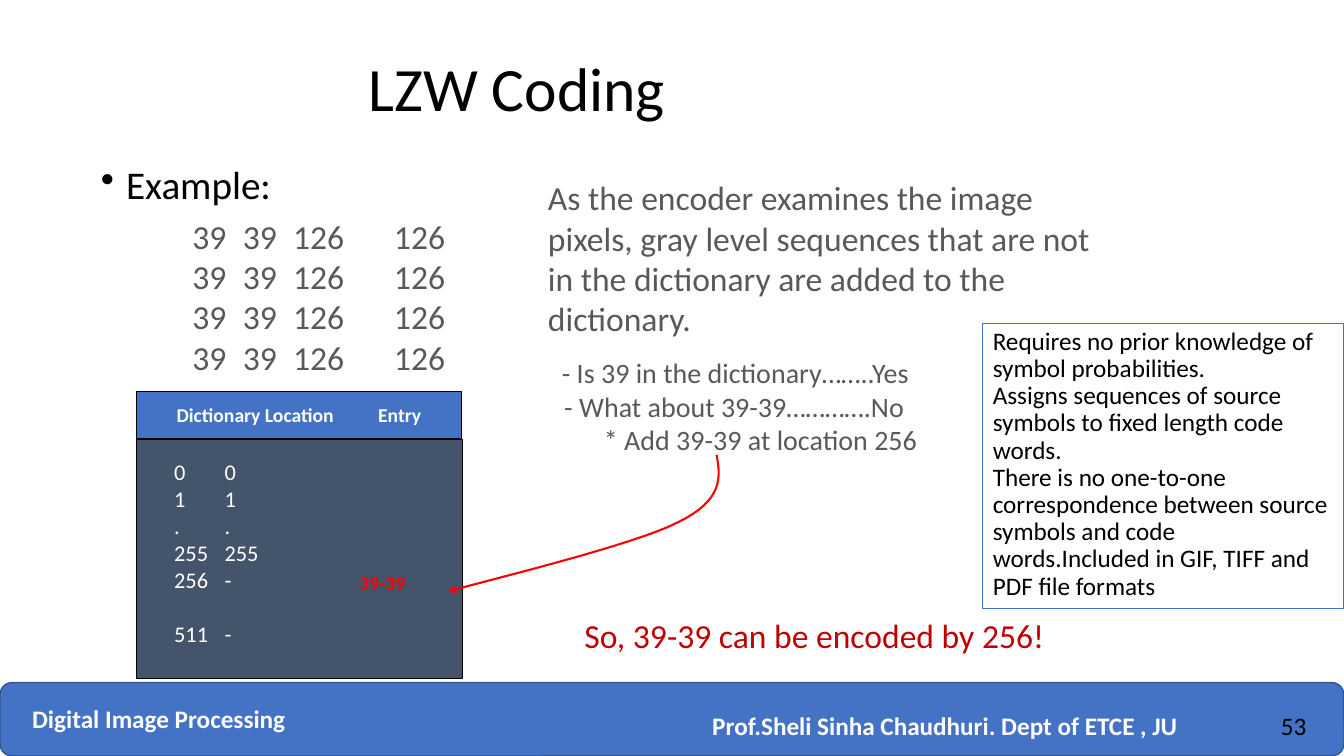
from dataclasses import dataclass

import pptx
import pptx.dml.color
import pptx.enum.shapes
import pptx.enum.text
import pptx.oxml
import pptx.oxml.ns
import pptx.util

Cm, Pt = pptx.util.Cm, pptx.util.Pt
RECT = pptx.enum.shapes.MSO_SHAPE.RECTANGLE
ROUNDED = pptx.enum.shapes.MSO_SHAPE.ROUNDED_RECTANGLE
NS = pptx.oxml.ns.nsdecls("a")

BLACK, WHITE, GRAY = "000000", "FFFFFF", "595959"
BLUE, SLATE, RED, DARK_RED = "4472C4", "44546A", "FF0000", "C00000"


@dataclass
class Line:
    text: str
    margin: float = 0
    tabs: tuple[float, ...] = ()
    bullet: bool = False
    before: float = 0


@dataclass
class Block:
    box: tuple[float, float, float, float]
    lines: list[Line]
    size: float
    color: str
    bold: bool = False
    wrap: bool = True
    middle: bool = False
    spacing: float = 1.0


@dataclass
class Panel:
    box: tuple[float, float, float, float]
    fill: str | None
    outline: str
    width: float = 0.75
    kind: pptx.enum.shapes.MSO_SHAPE = RECT


def rgb(value: str) -> pptx.dml.color.RGBColor:
    return pptx.dml.color.RGBColor.from_string(value)


def add_panel(slide, panel: Panel) -> None:
    sp = slide.shapes.add_shape(panel.kind, *map(Cm, panel.box))
    sp.shadow.inherit = False
    if panel.fill:
        sp.fill.solid()
        sp.fill.fore_color.rgb = rgb(panel.fill)
    else:
        sp.fill.background()
    sp.line.color.rgb = rgb(panel.outline)
    sp.line.width = Pt(panel.width)


def add_line(p, line: Line, block: Block) -> None:
    pPr = p._p.get_or_add_pPr()
    hanging = 0.64 if line.bullet else 0
    pPr.set("marL", str(Cm(line.margin + hanging)))
    pPr.set("indent", str(-Cm(hanging)))
    p.line_spacing = block.spacing
    p.space_before = Pt(line.before)
    if line.bullet:
        pPr.append(pptx.oxml.parse_xml(f'<a:buChar {NS} char="•"/>'))
    if line.tabs:
        stops = "".join(f'<a:tab pos="{Cm(t)}" algn="l"/>' for t in line.tabs)
        pPr.append(pptx.oxml.parse_xml(f"<a:tabLst {NS}>{stops}</a:tabLst>"))
    r = p.add_run()
    r.text = line.text
    font_format = {"name": "Calibri", "size": Pt(block.size), "bold": block.bold}
    for name, value in font_format.items():
        setattr(r.font, name, value)
    r.font.color.rgb = rgb(block.color)


def add_block(slide, block: Block) -> None:
    tf = slide.shapes.add_textbox(*map(Cm, block.box)).text_frame
    tf.word_wrap = block.wrap
    if block.middle:
        tf.vertical_anchor = pptx.enum.text.MSO_ANCHOR.MIDDLE
    for i, line in enumerate(block.lines):
        add_line(tf.add_paragraph() if i else tf.paragraphs[0], line, block)


def bezier(points: list[tuple[float, float]], steps: int = 16) -> list[tuple[float, float]]:
    """Points along a chain of cubic curves sharing their end points."""
    curve = [points[0]]
    for k in range(0, len(points) - 1, 3):
        for i in range(1, steps + 1):
            t = i / steps
            weights = ((1 - t) ** 3, 3 * t * (1 - t) ** 2, 3 * t * t * (1 - t), t ** 3)
            x, y = (sum(w * pt[axis] for w, pt in zip(weights, points[k:k + 4]))
                    for axis in (0, 1))
            curve.append((x, y))
    return curve


def add_curved_arrow(slide, points: list[tuple[float, float]], color: str) -> None:
    start, *rest = [(Cm(x), Cm(y)) for x, y in bezier(points)]
    builder = slide.shapes.build_freeform(*start)
    builder.add_line_segments(rest, close=False)
    sp = builder.convert_to_shape()
    sp.shadow.inherit = False
    sp.fill.background()
    sp.line.color.rgb = rgb(color)
    sp.line.width = Pt(1.5)
    sp.line._get_or_add_ln().append(pptx.oxml.parse_xml(f'<a:tailEnd {NS} type="triangle"/>'))


PANELS = [
    Panel((0, 17.2, 33.87, 1.85), BLUE, "325491", 1, ROUNDED),
    Panel((3.45, 9.86, 8.18, 1.19), BLUE, BLACK),
    Panel((3.45, 11.07, 8.2, 6.02), SLATE, BLACK),
    Panel((24.77, 8.15, 9.09, 7.19), None, BLUE),
]

ENTRIES = [("0", "0"), ("1", "1"), (".", "."), ("255", "255"), ("256", "-"), ("511", "-")]
dictionary = [Line(f"{place}\t{entry}", tabs=(6.38,), before=19.5 if place == "511" else 0)
              for place, entry in ENTRIES]
pixels = [Line("39\t39\t126\t126", tabs=(1.41, 2.85, 4.71)) for _ in range(4)]

BLOCKS = [
    # Footer
    Block((0.56, 17.6, 6.93, 1.02), [Line("Digital Image Processing")], 18, WHITE, True, False),
    Block((17.7, 17.78, 12.5, 1.02), [Line("Prof.Sheli Sinha Chaudhuri. Dept of ETCE , JU")],
          18, WHITE, True, False),
    Block((32.03, 17.78, 1.27, 1.02), [Line("53")], 18, BLACK, wrap=False),
    # Title and example
    Block((9.04, 1.02, 13.92, 2.59), [Line("LZW Coding")], 44, BLACK, middle=True, spacing=0.9),
    Block((2.29, 4.04, 29.21, 12.09), [Line("Example:", bullet=True)], 28, BLACK, spacing=0.9),
    Block((4.6, 5.31, 7.42, 5.38), pixels, 24, GRAY),
    # Encoder steps
    Block((12.29, 4.34, 15.67, 4.37),
          [Line("As the encoder examines the image pixels, gray level sequences that are not "
                "in the dictionary are added to the dictionary.", margin=1.27)], 24, GRAY),
    Block((13.34, 8.84, 11, 3.58),
          [Line("- Is 39 in the dictionary……..Yes", margin=0.57),
           Line("- What about 39-39………….No", margin=0.63),
           Line("* Add 39-39 at location 256", margin=1.63)], 20, GRAY),
    Block((14.48, 15.37, 12.19, 1.27), [Line("So, 39-39 can be encoded by 256!")],
          24, DARK_RED, wrap=False),
    # Dictionary
    Block((4.2, 9.86, 7.43, 1.19), [Line("Dictionary Location\tEntry", tabs=(5.07,))],
          14, WHITE, True, middle=True),
    Block((4.14, 11.43, 8.2, 6.43), dictionary, 16, WHITE),
    Block((8.81, 14.27, 2.08, 0.86), [Line("39-39")], 14, RED, True),
    # Properties
    Block((24.77, 8.15, 9.09, 7.19),
          [Line("Requires no prior knowledge of symbol probabilities."),
           Line("Assigns sequences of source symbols to fixed length code words."),
           Line("There is no one-to-one correspondence between source symbols and code "
                "words.Included in GIF, TIFF and PDF file formats")], 18, BLACK, spacing=0.9),
]

ARROW = [(18.06, 11.46), (18.16, 12.01), (18.24, 12.6), (17.09, 13.16),
         (15.98, 13.74), (12.24, 14.63), (11.28, 14.91)]


def main() -> None:
    prs = pptx.Presentation()
    prs.slide_width, prs.slide_height = Cm(33.87), Cm(19.05)
    slide = prs.slides.add_slide(prs.slide_layouts[6])
    for panel in PANELS:
        add_panel(slide, panel)
    for block in BLOCKS:
        add_block(slide, block)
    add_curved_arrow(slide, ARROW, RED)
    prs.save("out.pptx")


if __name__ == "__main__":
    main()
